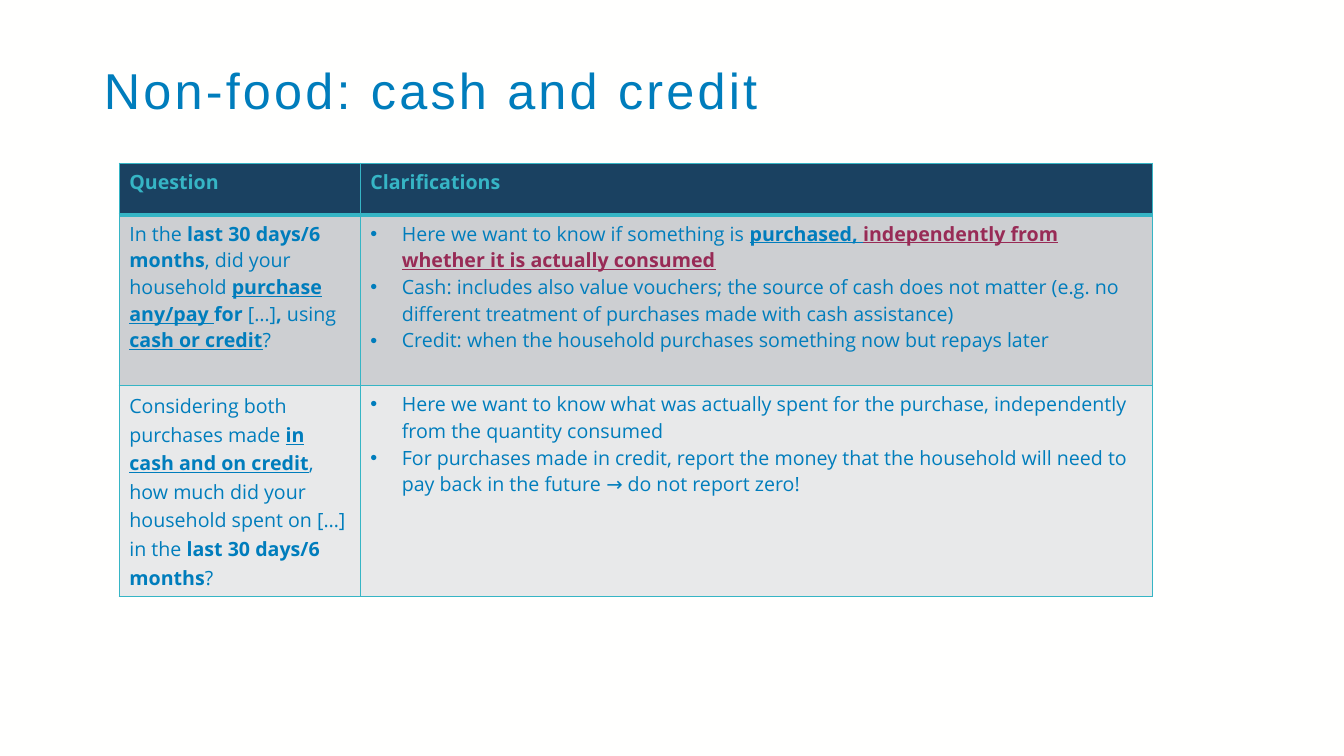
"""Build the slide on cash and credit questions for non-food purchases."""
from dataclasses import dataclass
from typing import Any

from lxml.etree import SubElement
from pptx import Presentation
from pptx.dml.color import RGBColor as Rgb
from pptx.enum.text import MSO_ANCHOR as Anchor
from pptx.oxml.ns import qn
from pptx.util import Pt

COLOURS = {
    "paper": "FFFFFE", "blue": "007DBC", "teal": "36B5C5", "navy": "1A4161",
    "grey": "CDCFD2", "pale": "E8E9EA", "wine": "982B56",
}
STYLES: dict[str, dict[str, Any]] = {
    "plain": {"bold": False, "underline": False},
    "bold": {"bold": True, "underline": False},
    "key": {"bold": True, "underline": True},
}
TABLE_FONT = {"name": "Open Sans", "size": Pt(14)}
TITLE_FONT = {"name": "Arial", "size": Pt(36), "bold": False}
TITLE_PLACE = {"left": Pt(67), "top": Pt(43.2), "width": Pt(830.2), "height": Pt(90.7)}
TITLE_FRAME = {"word_wrap": True, "vertical_anchor": Anchor.TOP}
LOOSE = {"line_spacing": 1.07, "space_after": Pt(8)}
TABLE_FLAGS = {"first_row": True, "horz_banding": False}
COLUMN_WIDTHS = (172.1, 565.9)
BULLET_INDENT = Pt(22.5)
THIN, THICK = Pt(1), Pt(3)


@dataclass(frozen=True)
class Phrase:
    text: str
    style: str = "plain"
    colour: str = "blue"


@dataclass(frozen=True)
class Entry:
    paragraphs: list[list[Phrase]]
    bulleted: bool = False
    spacing: dict[str, Any] | None = None


@dataclass(frozen=True)
class Band:
    height: float
    fill: str
    entries: list[Entry]
    top: int = THIN
    bottom: int = THIN


BANDS = [
    Band(37, "navy", [
        Entry([[Phrase(heading, "bold", "teal")]])
        for heading in ("Question", "Clarifications")
    ], bottom=THICK),
    Band(122, "grey", [
        Entry([[
            Phrase("In the "), Phrase("last 30 days/6 months", "bold"),
            Phrase(", did your household "), Phrase("purchase any/pay ", "key"),
            Phrase("for", "bold"), Phrase(" […]"), Phrase(", ", "bold"),
            Phrase("using "), Phrase("cash or credit", "key"), Phrase("?"),
        ]]),
        Entry([
            [Phrase("Here we want to know if something is "),
             Phrase("purchased, ", "key"),
             Phrase("independently from whether it is actually consumed", "key", "wine")],
            [Phrase("Cash: includes also value vouchers; the source of cash does not matter "
                    "(e.g. no different treatment of purchases made with cash assistance)")],
            [Phrase("Credit: when the household purchases something now but repays later")],
        ], bulleted=True),
    ], top=THICK),
    Band(150.5, "pale", [
        Entry([[
            Phrase("Considering both purchases made "),
            Phrase("in cash and on credit", "key"),
            Phrase(", how much did your household spent on […] in the "),
            Phrase("last 30 days/6 months", "bold"), Phrase("?"),
        ]], spacing=LOOSE),
        Entry([
            [Phrase("Here we want to know what was actually spent for the purchase, "
                    "independently from the quantity consumed")],
            [Phrase("For purchases made in credit, report the money that the household "
                    "will need to pay back in the future → do not report zero!")],
        ], bulleted=True),
    ]),
]


def rgb(colour: str) -> Rgb:
    return Rgb.from_string(COLOURS[colour])


def apply(target: Any, values: dict[str, Any]) -> None:
    for attribute, value in values.items():
        setattr(target, attribute, value)


def add_bullet(paragraph: Any) -> None:
    properties = paragraph._p.get_or_add_pPr()
    properties.set("marL", str(BULLET_INDENT))
    properties.set("indent", str(-BULLET_INDENT))
    SubElement(properties, qn("a:buFont")).set("typeface", "Arial")
    SubElement(properties, qn("a:buChar")).set("char", "•")


def add_borders(cell: Any, band: Band) -> None:
    properties = cell._tc.get_or_add_tcPr()
    sides = {"lnL": THIN, "lnR": THIN, "lnT": band.top, "lnB": band.bottom}
    for side, width in sides.items():
        border = SubElement(properties, qn(f"a:{side}"))
        border.set("w", str(width))
        paint = SubElement(border, qn("a:solidFill"))
        SubElement(paint, qn("a:srgbClr")).set("val", COLOURS["teal"])


def write_entry(frame: Any, entry: Entry) -> None:
    for index, phrases in enumerate(entry.paragraphs):
        paragraph = frame.add_paragraph() if index else frame.paragraphs[0]
        if entry.bulleted:
            add_bullet(paragraph)
        apply(paragraph, entry.spacing or {})
        for phrase in phrases:
            run = paragraph.add_run()
            run.text = phrase.text
            apply(run.font, TABLE_FONT | STYLES[phrase.style])
            run.font.color.rgb = rgb(phrase.colour)


def write_title(title: Any) -> None:
    apply(title, TITLE_PLACE)
    apply(title.text_frame, TITLE_FRAME)
    heading = title.text_frame.paragraphs[0]
    apply(heading, {"alignment": 1, "line_spacing": 0.9})
    words = heading.add_run()
    words.text = "Non-food: cash and credit"
    apply(words.font, TITLE_FONT)
    words.font.color.rgb = rgb("blue")
    words._r.get_or_add_rPr().set("spc", "230")


def add_questions(slide: Any) -> None:
    height = sum(band.height for band in BANDS)
    questions = slide.shapes.add_table(
        len(BANDS), len(COLUMN_WIDTHS), Pt(85.2), Pt(116.6),
        Pt(sum(COLUMN_WIDTHS)), Pt(height)).table
    apply(questions, TABLE_FLAGS)
    for column, width in zip(questions.columns, COLUMN_WIDTHS):
        column.width = Pt(width)
    for row, band in zip(questions.rows, BANDS):
        row.height = Pt(band.height)
        for cell, entry in zip(row.cells, band.entries):
            add_borders(cell, band)
            cell.fill.solid()
            cell.fill.fore_color.rgb = rgb(band.fill)
            write_entry(cell.text_frame, entry)


def main() -> None:
    deck = Presentation()
    apply(deck, {"slide_width": Pt(960), "slide_height": Pt(540)})
    slide = deck.slides.add_slide(deck.slide_layouts[5])
    slide.background.fill.solid()
    slide.background.fill.fore_color.rgb = rgb("paper")
    write_title(slide.shapes.title)
    add_questions(slide)
    deck.save("out.pptx")


if __name__ == "__main__":
    main()
